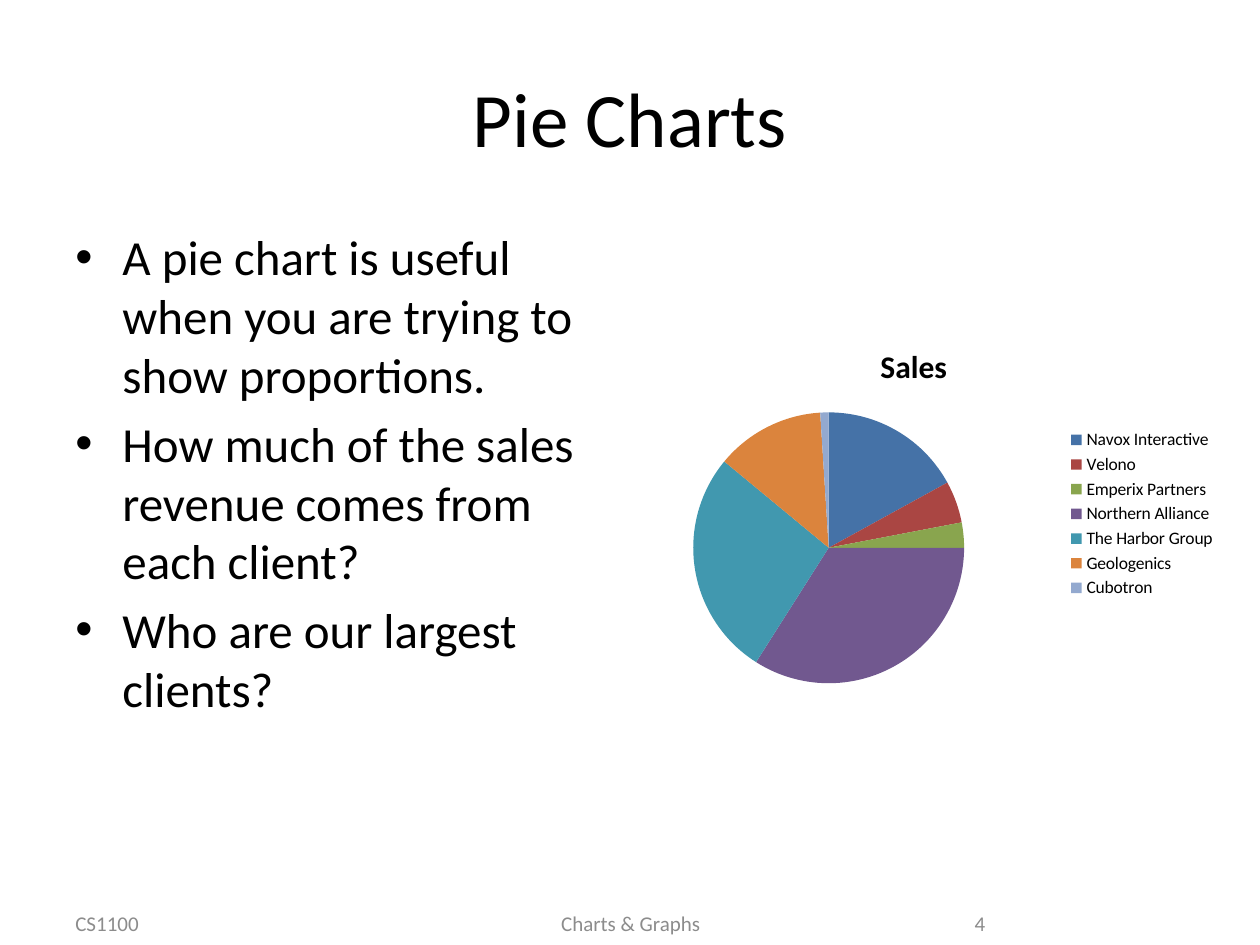
from dataclasses import dataclass

from lxml import etree
from pptx import Presentation
from pptx.chart.data import CategoryChartData
from pptx.dml.color import RGBColor
from pptx.enum import chart as charts, text
from pptx.oxml import parse_xml
from pptx.oxml.ns import nsdecls, qn
from pptx.util import Cm, Pt


@dataclass(frozen=True)
class Theme:
    font: str = "Calibri"
    ink: str = "000000"
    muted: str = "8C8C8C"
    title: int = 44
    body: int = 28
    footer: int = 12
    chart_title: int = 18
    legend: int = 10
    slices: tuple = ("4572A7", "AA4643", "89A54E", "71588F",
                     "4198AF", "DB843D", "93A9CF")


THEME = Theme()
LEFT = 1.27

BULLETS = (
    "A pie chart is useful when you are trying to show proportions.",
    "How much of the sales revenue comes from each client?",
    "Who are our largest clients?",
)
SALES = {
    "Navox Interactive": 17,
    "Velono": 5,
    "Emperix Partners": 3,
    "Northern Alliance": 34,
    "The Harbor Group": 27,
    "Geologenics": 13,
    "Cubotron": 1,
}


def style_font(font, size, color=THEME.ink, bold=False):
    font.name = THEME.font
    font.size = Pt(size)
    font.bold = bold
    font.color.rgb = RGBColor.from_string(color)


def add_text(page, area, lines, size, color=THEME.ink,
             align=text.PP_ALIGN.LEFT, anchor=text.MSO_ANCHOR.MIDDLE):
    """Add a wrapped text box with one paragraph per line; return its frame."""
    frame = page.shapes.add_textbox(*map(Cm, area)).text_frame
    frame.word_wrap = True
    frame.vertical_anchor = anchor
    frame.text = "\n".join(lines)
    for para in frame.paragraphs:
        para.alignment = align
        for span in para.runs:
            style_font(span.font, size, color)
    return frame


def add_bullets(page, area, lines):
    frame = add_text(page, area, lines, THEME.body,
                     anchor=text.MSO_ANCHOR.TOP)
    indent = Cm(0.95)
    for index, para in enumerate(frame.paragraphs):
        properties = para._p.get_or_add_pPr()
        properties.set("marL", str(indent))
        properties.set("indent", str(-indent))
        etree.SubElement(properties, qn("a:buFont"), typeface="Arial")
        etree.SubElement(properties, qn("a:buChar"), char="•")
        if index:
            para.space_before = Pt(0.2 * THEME.body)


def place_plot(chart, x, y, w, h):
    """Fix the inner plot area, in fractions of the chart's size."""
    values = "".join(f'<c:{tag} val="{value}"/>' for tag, value in
                     (("x", x), ("y", y), ("w", w), ("h", h)))
    layout = parse_xml(
        f'<c:layout {nsdecls("c")}><c:manualLayout>'
        '<c:layoutTarget val="inner"/><c:xMode val="edge"/>'
        f'<c:yMode val="edge"/>{values}</c:manualLayout></c:layout>')
    plot_area = chart._chartSpace.chart.plotArea
    for old in plot_area.findall(qn("c:layout")):
        plot_area.remove(old)
    plot_area.insert(0, layout)


def add_pie(page, area, name, values):
    data = CategoryChartData()
    data.categories = list(values)
    data.add_series(name, list(values.values()))
    chart = page.shapes.add_chart(charts.XL_CHART_TYPE.PIE,
                                  *map(Cm, area), data).chart
    style_font(chart.font, THEME.legend)

    chart.has_title = True
    heading = chart.chart_title.text_frame
    heading.text = name
    style_font(heading.paragraphs[0].runs[0].font, THEME.chart_title,
               bold=True)

    chart.has_legend = True
    chart.legend.position = charts.XL_LEGEND_POSITION.RIGHT
    chart.legend.include_in_layout = False
    style_font(chart.legend.font, THEME.legend)

    for index, color in enumerate(THEME.slices):
        fill = chart.plots[0].series[0].points[index].format.fill
        fill.solid()
        fill.fore_color.rgb = RGBColor.from_string(color)
    place_plot(chart, 0.15, 0.23, 0.43, 0.72)


def add_footer(page):
    top, height = 18.21, 0.79
    for left, width, label, align in (
            (LEFT, 5.92, "CS1100", text.PP_ALIGN.LEFT),
            (8.69, 8.05, "Charts & Graphs", text.PP_ALIGN.CENTER),
            (18.21, 1.9, "4", text.PP_ALIGN.RIGHT)):
        add_text(page, (left, top, width, height), [label],
                 THEME.footer, THEME.muted, align)


def main():
    deck = Presentation()
    deck.slide_width, deck.slide_height = Cm(25.4), Cm(19.05)
    page = deck.slides.add_slide(deck.slide_layouts[6])
    add_text(page, (LEFT, 0.76, 22.86, 3.18), ["Pie Charts"],
             THEME.title, align=text.PP_ALIGN.CENTER)
    add_bullets(page, (LEFT, 4.45, 11.23, 12.57), BULLETS)
    add_footer(page)
    add_pie(page, (12.07, 6.55, 12.7, 7.62), "Sales", SALES)
    deck.save("out.pptx")


if __name__ == "__main__":
    main()
